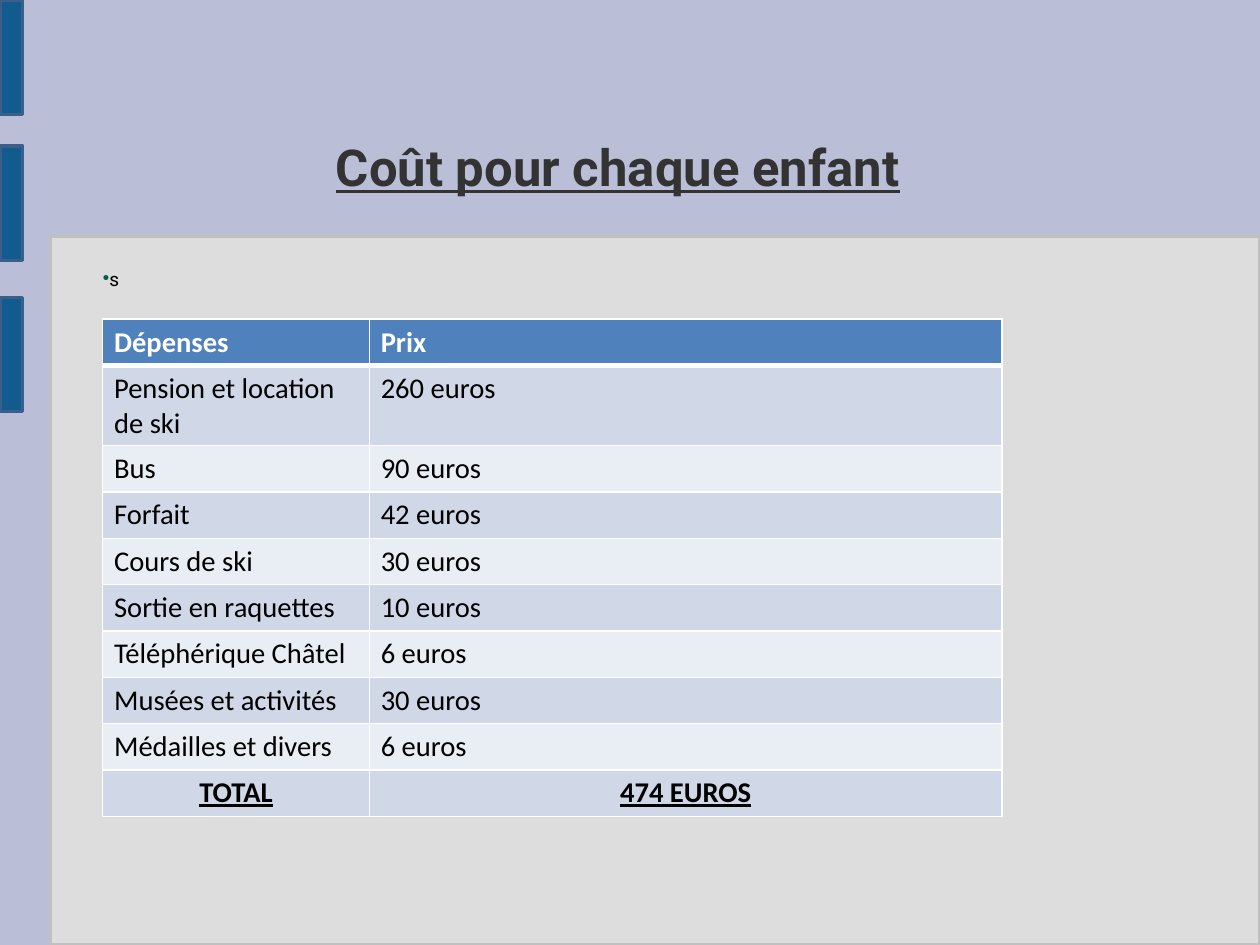
from dataclasses import dataclass

from pptx import Presentation
from pptx.dml.color import RGBColor as RGB
from pptx.enum.shapes import MSO_SHAPE as Shape
from pptx.enum.text import MSO_ANCHOR as Anchor, PP_ALIGN as Align
from pptx.oxml import parse_xml
from pptx.oxml.ns import nsdecls
from pptx.util import Pt


@dataclass(frozen=True)
class Theme:
    back: str = "BABED6"
    panel: str = "DDDDDD"
    rim: str = "C0C0C0"
    bar: str = "125C8D"
    edge: str = "3A5F8C"
    title: str = "333333"
    ink: str = "000000"
    dot: str = "0E594D"
    white: str = "FFFFFF"
    head: str = "4F81BD"
    bands: tuple = ("D0D8E8", "E9EDF4")
    font: str = "Roboto"
    grid: str = "Calibri"
    big: int = 32
    mid: int = 18
    small: int = 12


T = Theme()
COSTS = [
    ("Dépenses", "Prix"),
    ("Pension et location de ski", "260 euros"),
    ("Bus", "90 euros"),
    ("Forfait", "42 euros"),
    ("Cours de ski", "30 euros"),
    ("Sortie en raquettes", "10 euros"),
    ("Téléphérique Châtel", "6 euros"),
    ("Musées et activités", "30 euros"),
    ("Médailles et divers", "6 euros"),
    ("TOTAL", "474 EUROS"),
]


def write(frame, text, size=T.mid, font=T.grid, color=T.ink, bold=False,
          under=False, align=Align.LEFT):
    para = frame.paragraphs[0]
    para.alignment = align
    run = para.add_run()
    run.text = text
    run.font.size, run.font.name = Pt(size), font
    run.font.bold, run.font.underline = bold, under
    run.font.color.rgb = RGB.from_string(color)
    return para


def add_box(slide, box, fill, line):
    rect = slide.shapes.add_shape(Shape.RECTANGLE, *map(Pt, box))
    rect.shadow.inherit = False
    rect.fill.solid()
    rect.fill.fore_color.rgb = RGB.from_string(fill)
    rect.line.color.rgb = RGB.from_string(line)
    rect.line.width = Pt(2)


def add_frame(slide, box, anchor=Anchor.TOP):
    frame = slide.shapes.add_textbox(*map(Pt, box)).text_frame
    frame.word_wrap = True
    frame.vertical_anchor = anchor
    frame.margin_left = frame.margin_right = 0
    frame.margin_top = frame.margin_bottom = 0
    return frame


# Side bars, stacked down the left edge
def add_bars(slide, box):
    left, top, width, height = box
    for drop in (0, 92, 187.2):
        add_box(slide, (left, top + drop, width, height), T.bar, T.edge)


def add_title(slide, box):
    frame = add_frame(slide, box, Anchor.MIDDLE)
    write(frame, "Coût pour chaque enfant", size=T.big, font=T.font,
          color=T.title, bold=True, under=True, align=Align.CENTER)


# Body text with a small coloured bullet
def add_body(slide, box):
    para = write(add_frame(slide, box), "s", size=T.small, font=T.font)
    para.space_after = Pt(14.1)
    props = para._p.get_or_add_pPr()
    for part in (f'<a:buClr {nsdecls("a")}><a:srgbClr val="{T.dot}"/></a:buClr>',
                 f'<a:buSzPct {nsdecls("a")} val="45000"/>',
                 f'<a:buChar {nsdecls("a")} char="●"/>'):
        props.append(parse_xml(part))


def style_cell(cell, fill, base):
    cell.fill.solid()
    cell.fill.fore_color.rgb = RGB.from_string(fill)
    props = cell._tc.get_or_add_tcPr()
    for i, side in enumerate("LRTB"):
        wide = Pt(base if side == "B" else 1)
        props.insert(i, parse_xml(
            f'<a:ln{side} {nsdecls("a")} w="{wide}"><a:solidFill>'
            f'<a:srgbClr val="{T.white}"/></a:solidFill></a:ln{side}>'))


# Cost table: header, banded rows, centred total
def add_costs(slide, box):
    left, top, width, height = box
    last = len(COSTS) - 1
    table = slide.shapes.add_table(len(COSTS), 2, *map(Pt, box)).table
    table.horz_banding = False
    first = 168
    table.columns[0].width = Pt(first)
    table.columns[1].width = Pt(width - first)
    for r, texts in enumerate(COSTS):
        table.rows[r].height = Pt(height / len(COSTS))
        head, total = r == 0, r == last
        for c, text in enumerate(texts):
            cell = table.cell(r, c)
            style_cell(cell, T.head if head else T.bands[(r - 1) % 2],
                       3 if head else 1)
            write(cell.text_frame, text, color=T.white if head else T.ink,
                  bold=head or total, under=total,
                  align=Align.CENTER if total else Align.LEFT)


def main():
    deck = Presentation()
    deck.slide_width, deck.slide_height = Pt(793.7), Pt(595.28)
    slide = deck.slides.add_slide(deck.slide_layouts[6])
    slide.background.fill.solid()
    slide.background.fill.fore_color.rgb = RGB.from_string(T.back)

    add_box(slide, (32, 149, 761.7, 446.28), T.panel, T.rim)
    add_bars(slide, (0, 0, 14.2, 72))
    add_title(slide, (42.5, 85.2, 693.5, 39))
    add_body(slide, (64.7, 168.5, 663, 375))
    add_costs(slide, (64.7, 201, 566.5, 292))
    deck.save("out.pptx")


if __name__ == "__main__":
    main()
